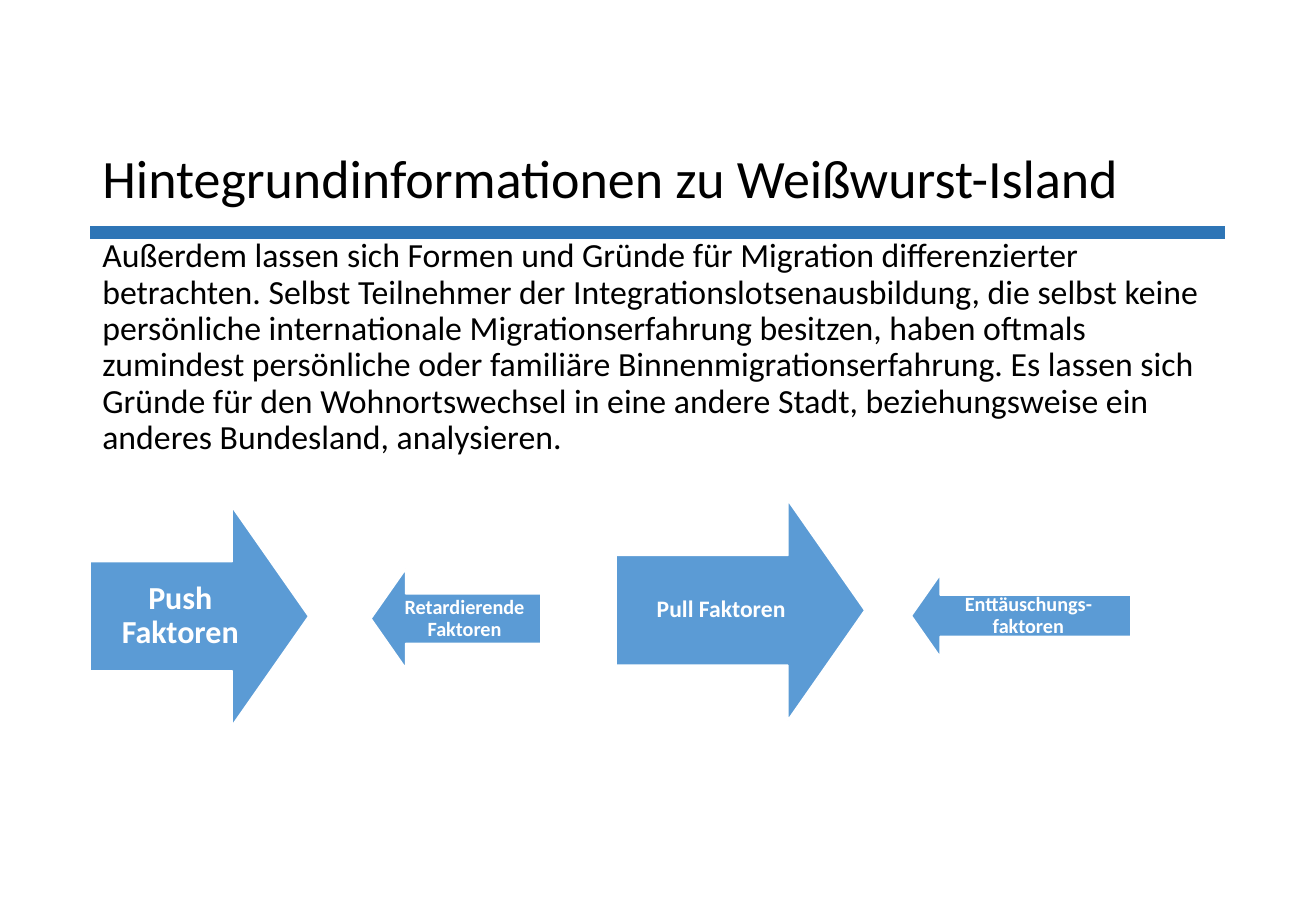
import pptx
import pptx.util
import pptx.dml.color
import pptx.enum.shapes
import pptx.enum.text
import pptx.oxml.ns
import lxml.etree

Pt = pptx.util.Pt
ALIGN = pptx.enum.text.PP_ALIGN
ANCHOR = pptx.enum.text.MSO_ANCHOR
COLORS = {"bar": "2E75B6", "arrow": "5B9BD5", "white": "FFFFFF", "black": "000000"}
TITLE = "Hintegrundinformationen zu Weißwurst-Island"
BODY = (
    "Außerdem lassen sich Formen und Gründe für Migration differenzierter betrachten. "
    "Selbst Teilnehmer der Integrationslotsenausbildung, die selbst keine persönliche "
    "internationale Migrationserfahrung besitzen, haben oftmals zumindest persönliche "
    "oder familiäre Binnenmigrationserfahrung. Es lassen sich Gründe für den "
    "Wohnortswechsel in eine andere Stadt, beziehungsweise ein anderes Bundesland, "
    "analysieren."
)
PAIRS = [
    [("Push Faktoren", 19, 10.8, (53.5, 300.5, 129.6, 129.6), False),
     ("Retardierende Faktoren", 12, 6.5, (220, 337.2, 100.8, 59), True)],
    [("Pull Faktoren", 14, 8, (365.3, 296.6, 147.6, 130.3), False),
     ("Enttäuschungs-faktoren", 12, 6.5, (540.5, 340.5, 130.3, 49), True)],
]


def color(name):
    """Return the named colour."""
    return pptx.dml.color.RGBColor.from_string(COLORS[name])


def write(shapes, box, text, size, tint="black", bold=False, align=ALIGN.LEFT,
          anchor=ANCHOR.MIDDLE, inset=(7.2, 3.6)):
    """Place a wrapped text in the box."""
    frame = shapes.add_textbox(*map(Pt, box)).text_frame
    frame.word_wrap = True
    frame.vertical_anchor = anchor
    frame.margin_left = frame.margin_right = Pt(inset[0])
    frame.margin_top = frame.margin_bottom = Pt(inset[1])
    frame.text = text
    para = frame.paragraphs[0]
    para.alignment = align
    para.line_spacing = 0.9
    font = para.runs[0].font
    font.name, font.size, font.bold = "Calibri", Pt(size), bold
    font.color.rgb = color(tint)


def rule(shapes, left, top, width):
    """Draw the bar under the title."""
    line = shapes.add_connector(pptx.enum.shapes.MSO_CONNECTOR.STRAIGHT,
                                Pt(left), Pt(top), Pt(left + width), Pt(top))
    line.line.color.rgb = color("bar")
    line.line.width = Pt(7.5)
    lxml.etree.SubElement(line._element.spPr, pptx.oxml.ns.qn("a:effectLst"))


def arrow(shapes, text, size, inset, box, back):
    """Draw a sideways arrow in the box with its label on the shaft."""
    left, top, width, height = box
    shift = (width - height) / 2
    shape = shapes.add_shape(pptx.enum.shapes.MSO_SHAPE.DOWN_ARROW,
                             Pt(left + shift), Pt(top - shift), Pt(height), Pt(width))
    shape.rotation = 90 if back else 270
    shape.adjustments[0], shape.adjustments[1] = 0.5, 0.35
    shape.shadow.inherit = False
    shape.fill.solid()
    shape.fill.fore_color.rgb = color("arrow")
    shape.line.color.rgb = color("white")
    shape.line.width = Pt(1)
    tip = height * 0.175
    label = (left + tip * back, top + height / 4, width - tip, height / 2)
    write(shapes, label, text, size, "white", True, ALIGN.CENTER, inset=(inset, inset))


def head(shapes, left, top, width):
    """Place the bar, the body text and the title."""
    rule(shapes, left, top, width)
    write(shapes, (left, top, width, 342), BODY, 20, anchor=ANCHOR.TOP)
    write(shapes, (left, top - 57.6, width, 54), TITLE, 32)


def main():
    """Build and save the slide."""
    deck = pptx.Presentation()
    deck.slide_width, deck.slide_height = Pt(780.48), Pt(540)
    slide = deck.slides.add_slide(deck.slide_layouts[6])
    head(slide.shapes, 53.6, 137.8, 673.2)
    for pair in PAIRS:
        group = slide.shapes.add_group_shape()
        for item in pair:
            arrow(group.shapes, *item)
    deck.save("out.pptx")


if __name__ == "__main__":
    main()
